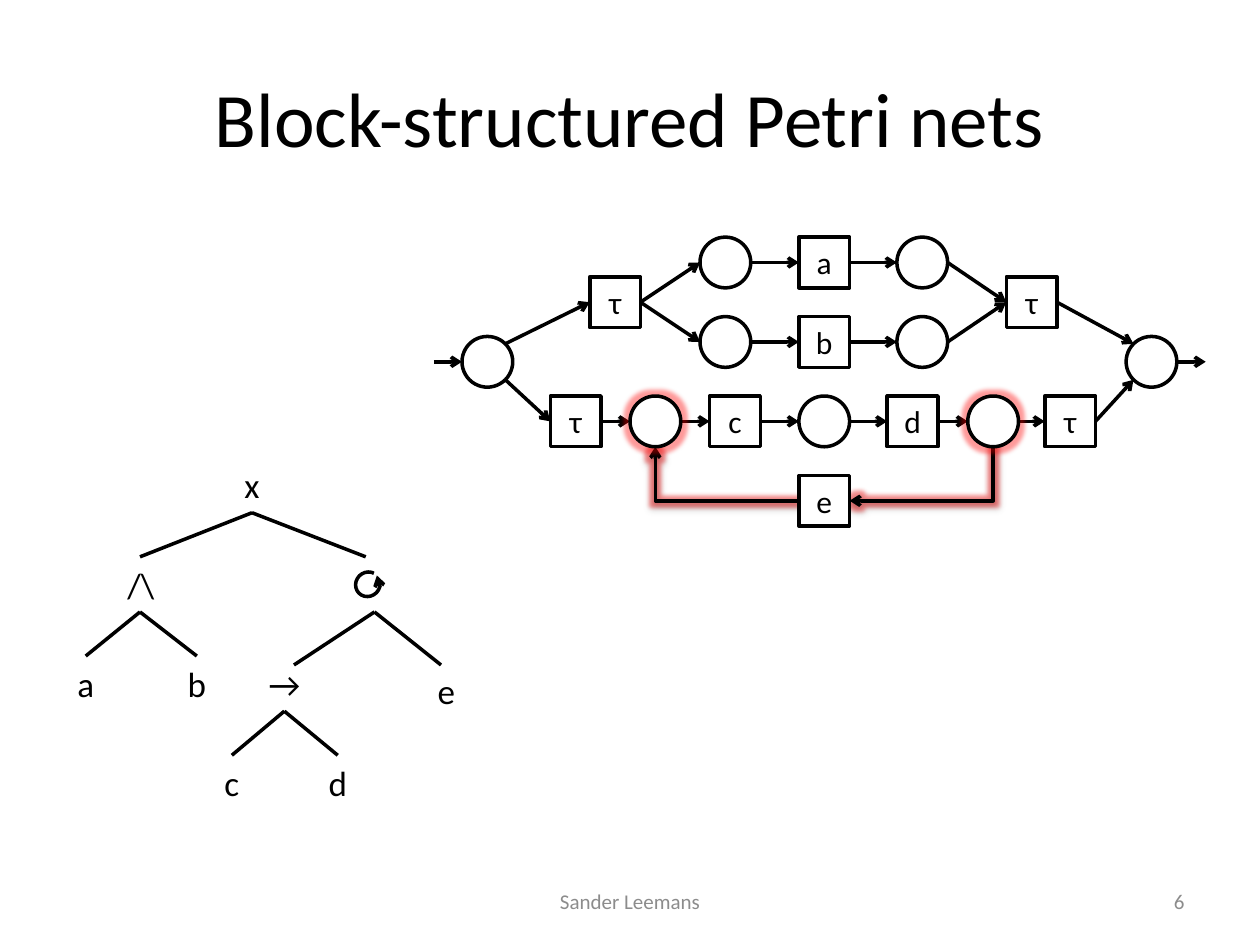
from lxml.etree import SubElement
from pptx import Presentation
from pptx.dml.color import RGBColor
from pptx.enum.shapes import MSO_CONNECTOR, MSO_SHAPE
from pptx.enum.text import MSO_ANCHOR, PP_ALIGN
from pptx.oxml import parse_xml
from pptx.oxml.ns import nsdecls, qn
from pptx.util import Pt

BLACK, WHITE, GREY, RED = "000000", "FFFFFF", "8C8C8C", "FF0000"
NODE = 29
ROW = 45.4
LEVEL = 56.7
LABEL_H = 31.5

# name: (shape, centre x, row, label)
NODES = {
    "start": ("place", 30.5, 1.25, ""),
    "split": ("step", 103.5, 0.5, "τ"),
    "a_in": ("place", 166.5, 0, ""),
    "a": ("step", 223, 0, "a"),
    "a_out": ("place", 279, 0, ""),
    "b_in": ("place", 166.5, 1, ""),
    "b": ("step", 223, 1, "b"),
    "b_out": ("place", 279, 1, ""),
    "join": ("step", 341.5, 0.5, "τ"),
    "enter": ("step", 81, 2, "τ"),
    "loop_in": ("glow", 126.5, 2, ""),
    "c": ("step", 172, 2, "c"),
    "middle": ("place", 223, 2, ""),
    "d": ("step", 273.5, 2, "d"),
    "loop_out": ("glow", 319.5, 2, ""),
    "leave": ("step", 363.5, 2, "τ"),
    "e": ("step", 223, 3, "e"),
    "end": ("place", 410, 1.25, ""),
}
PATHS = [
    "start split a_in a a_out join end",
    "split b_in b b_out join",
    "start enter loop_in c middle d loop_out leave end",
]


def rgb(color):
    return RGBColor.from_string(color)


def write(sp, text, size, color=BLACK, align=PP_ALIGN.CENTER, anchor=MSO_ANCHOR.TOP, wrap=True):
    tf = sp.text_frame
    tf.word_wrap = wrap
    tf.vertical_anchor = anchor
    p = tf.paragraphs[0]
    p.alignment = align
    r = p.add_run()
    r.text = text
    r.font.name = "Calibri"
    r.font.size = Pt(size)
    r.font.color.rgb = rgb(color)


def add_text(s, box, text, size, **style):
    write(s.shapes.add_textbox(*map(Pt, box)), text, size, **style)


def set_line(sp, arrow_end=None):
    sp.line.color.rgb = rgb(BLACK)
    sp.line.width = Pt(2)
    if arrow_end:
        SubElement(sp.line._get_or_add_ln(), qn("a:" + arrow_end), type="arrow")


def add_effects(sp, glow=False, shadow=False):
    """Replace the theme effects; with neither flag the shape stays flat."""
    xml = ""
    if glow:
        xml += (f'<a:glow rad="{Pt(5)}"><a:srgbClr val="{RED}">'
                '<a:alpha val="40000"/></a:srgbClr></a:glow>')
    if shadow:
        xml += (f'<a:outerShdw blurRad="{Pt(3.1)}" dist="{Pt(1.6)}" dir="5400000" '
                f'rotWithShape="0"><a:srgbClr val="{BLACK}">'
                '<a:alpha val="38000"/></a:srgbClr></a:outerShdw>')
    sp._element.spPr.append(parse_xml(f'<a:effectLst {nsdecls("a")}>{xml}</a:effectLst>'))


def add_line(s, x1, y1, x2, y2, arrow=False):
    sp = s.shapes.add_connector(MSO_CONNECTOR.STRAIGHT, *map(Pt, (x1, y1, x2, y2)))
    set_line(sp, "tailEnd" if arrow else None)
    add_effects(sp)


def add_bend(s, cx, cy, w, h, turn):
    """Draw a one-corner arrow of w by h, before turning, about its centre."""
    sp = s.shapes.add_connector(
        MSO_CONNECTOR.ELBOW, *map(Pt, (cx - w / 2, cy - h / 2, cx + w / 2, cy + h / 2)))
    spPr = sp._element.spPr
    spPr.find(qn("a:prstGeom")).set("prst", "bentConnector2")
    spPr.find(qn("a:xfrm")).set("rot", str(turn * 60000))
    set_line(sp, "tailEnd")
    add_effects(sp, glow=True, shadow=True)


def add_node(s, cx, cy, kind, label):
    shape = MSO_SHAPE.RECTANGLE if kind == "step" else MSO_SHAPE.OVAL
    half = NODE / 2
    sp = s.shapes.add_shape(shape, *map(Pt, (cx - half, cy - half, NODE, NODE)))
    sp.fill.solid()
    sp.fill.fore_color.rgb = rgb(WHITE)
    set_line(sp)
    add_effects(sp, glow=kind == "glow")
    if label:
        write(sp, label, 18)


def add_petri_net(s, left, top, width):
    half = NODE / 2
    diagonal = half * 0.71
    centre = {name: (left + x, top + half + row * ROW)
              for name, (_, x, row, _) in NODES.items()}

    def port(name, other, side):
        x, y = centre[name]
        if name in ("start", "end"):
            up = 1 if centre[other][1] > y else -1
            return x + side * diagonal, y + up * diagonal
        return x + side * half, y

    for path in PATHS:
        names = path.split()
        for a, b in zip(names, names[1:]):
            add_line(s, *port(a, b, 1), *port(b, a, -1), arrow=True)
    x, y = centre["start"]
    add_line(s, left, y, x - half, y, arrow=True)
    x, y = centre["end"]
    add_line(s, x + half, y, left + width, y, arrow=True)

    ex, ey = centre["e"]
    drop = ROW - half
    for name, side in (("loop_out", 1), ("loop_in", -1)):
        x = centre[name][0]
        run = abs(x - ex) - half
        size = (drop, run, 90) if side == 1 else (run, drop, 180)
        add_bend(s, x - side * run / 2, ey - drop / 2, *size)

    for name, (kind, _, _, label) in NODES.items():
        add_node(s, *centre[name], kind, label)


def add_loop_symbol(s, x, y):
    sp = s.shapes.add_shape(MSO_SHAPE.ARC, Pt(x), Pt(y), Pt(14.4), Pt(13.7))
    # Angles are in 60000ths of a degree, adjustments in 100000ths
    sp.adjustments[0] = 180.44 * 0.6
    sp.adjustments[1] = 163.68 * 0.6
    sp.rotation = 135
    sp.fill.background()
    set_line(sp, "headEnd")
    add_effects(sp)


def add_process_tree(s, left, top):
    labels = [("x", 108, 0), ("/\\", 44.5, 1), ("a", 13, 2), ("b", 76.5, 2),
              ("→", 126.5, 2), ("e", 219, 2.07), ("c", 96.5, 3), ("d", 157, 3)]
    # parent x, parent level, child xs, child level
    branches = [(108, 0, (44, 173), 1), (44, 1, (13, 76.5), 2),
                (178, 1, (132, 216), 2.09), (126.5, 2, (96.5, 157), 3)]
    for text, x, level in labels:
        add_text(s, (left + x - 17, top + level * LEVEL, 34, LABEL_H), text, 20, wrap=False)
    for x, level, children, child_level in branches:
        for child in children:
            add_line(s, left + x, top + level * LEVEL + LABEL_H,
                     left + child, top + child_level * LEVEL)
    add_loop_symbol(s, left + 167, top + 65.5)


def add_footer(s, left, top, width, height):
    style = dict(color=GREY, anchor=MSO_ANCHOR.MIDDLE)
    add_text(s, (left, top, 228, height), "Sander Leemans", 12, **style)
    add_text(s, (left + width - 168, top, 168, height), "6", 12,
             align=PP_ALIGN.RIGHT, **style)


def main():
    prs = Presentation()
    prs.slide_width, prs.slide_height = Pt(720), Pt(540)
    s = prs.slides.add_slide(prs.slide_layouts[6])
    add_text(s, (36, 21.6, 648, 90), "Block-structured Petri nets", 44,
             anchor=MSO_ANCHOR.MIDDLE)
    add_process_tree(s, 36, 261.5)
    add_petri_net(s, 248, 135.5, 441)
    add_footer(s, 246, 500.5, 438, 28.75)
    prs.save("out.pptx")


if __name__ == "__main__":
    main()
